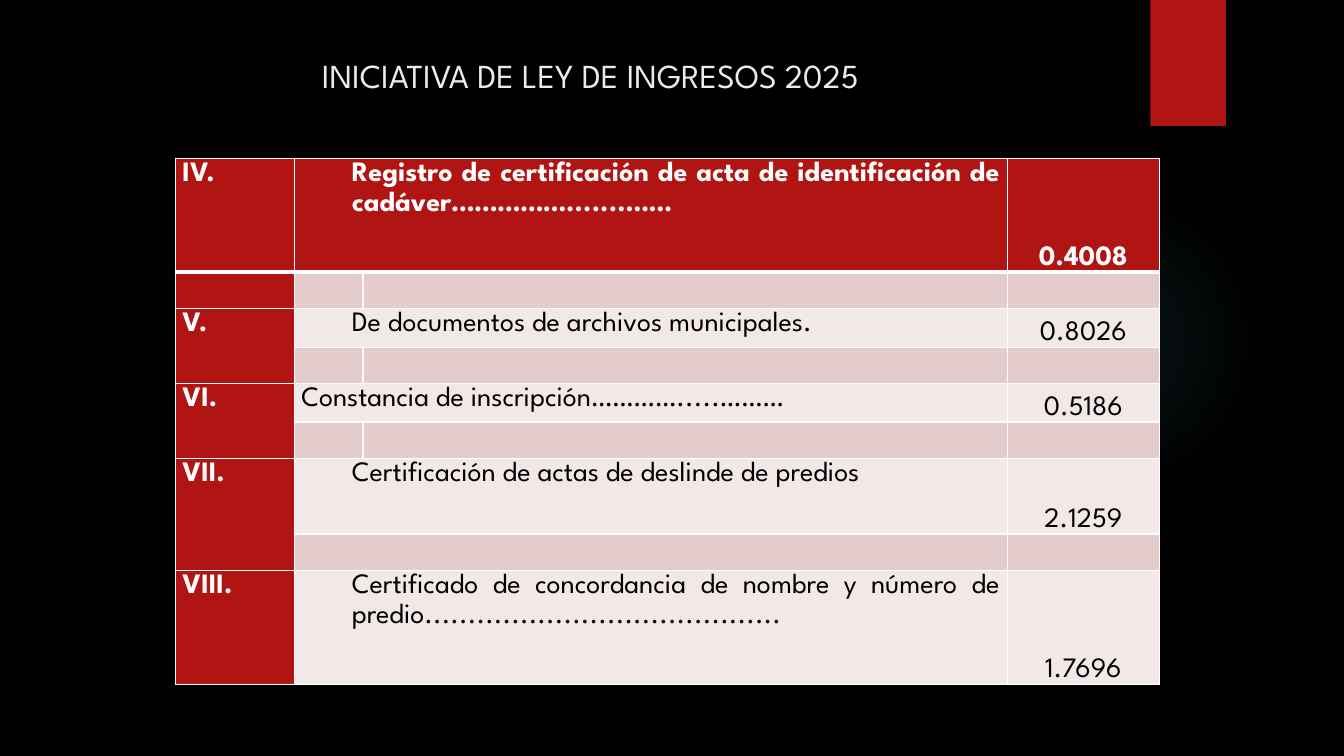
from lxml.etree import SubElement
from pptx import Presentation
from pptx.dml.color import RGBColor
from pptx.enum.shapes import MSO_SHAPE
from pptx.enum.text import MSO_ANCHOR, PP_ALIGN
from pptx.oxml import parse_xml
from pptx.oxml.ns import qn
from pptx.util import Inches, Pt

FONT = "League Spartan"
RED, PINK, PALE, WHITE, BLACK = "B01513", "E4CCCC", "F2E8E7", "FFFFFF", "000000"
NS = 'xmlns:a="http://schemas.openxmlformats.org/drawingml/2006/main"'
COLS = [1.18, 0.68, 6.39, 1.51]
ROWS = [1.13, 0.36, 0.36, 0.36, 0.36, 0.36, 0.75, 0.36, 1.13]

# Table row: label, concept, fee, indent
ITEMS = {
    0: ("IV.", "Registro de certificación de acta de identificación de "
        "cadáver…………….......……", "0.4008", 0.5),
    2: ("V.", "De documentos de archivos municipales.", "0.8026", 0.5),
    4: ("VI.", "Constancia de inscripción………….....………", "0.5186", 0),
    6: ("VII.", "Certificación de actas de deslinde de predios", "2.1259", 0.5),
    8: ("VIII.", "Certificado de concordancia de nombre y número de "
        "predio.........................................", "1.7696", 0.5),
}


def color(code):
    return RGBColor.from_string(code)


def paint(part, code):
    part.fill.solid()
    part.fill.fore_color.rgb = color(code)


def write(para, text, size, code, align, bold=False):
    para.text = text
    para.alignment = align
    font = para.font
    font.name, font.size, font.bold = FONT, Pt(size), bold
    font.color.rgb = color(code)


def shape(slide, kind, box):
    form = slide.shapes.add_shape(kind, *map(Inches, box))
    form.shadow.inherit = False
    form.line.fill.background()
    return form


def decor(slide, glow, tab):
    # Faint glow that fades outwards
    disc = shape(slide, MSO_SHAPE.OVAL, glow)
    stops = "".join(
        f'<a:gs pos="{pos}000"><a:srgbClr val="50B9C1">'
        f'<a:alpha val="{alpha}000"/></a:srgbClr></a:gs>'
        for pos, alpha in ((0, 7), (36, 6), (69, 0)))
    fill = parse_xml(
        f'<a:gradFill {NS}><a:gsLst>{stops}</a:gsLst><a:path path="circle">'
        '<a:fillToRect l="50000" t="50000" r="50000" b="50000"/>'
        '</a:path></a:gradFill>')
    disc._element.spPr.find(qn("a:prstGeom")).addnext(fill)
    # Red tab
    paint(shape(slide, MSO_SHAPE.RECTANGLE, tab), RED)


def title(slide, box):
    frame = slide.shapes.add_textbox(*map(Inches, box)).text_frame
    frame.word_wrap = True
    frame.vertical_anchor = MSO_ANCHOR.MIDDLE
    write(frame.paragraphs[0], "INICIATIVA DE LEY DE INGRESOS 2025", 24,
          "EBEBEB", PP_ALIGN.CENTER)


def edge(cell, row):
    props = cell._tc.get_or_add_tcPr()
    heavy = {(0, "B"), (1, "T")}
    for spot, side in enumerate("LRTB"):
        line = SubElement(props, qn(f"a:ln{side}"))
        line.set("w", str(Pt(3 if (row, side) in heavy else 1)))
        fill = SubElement(line, qn("a:solidFill"))
        SubElement(fill, qn("a:srgbClr")).set("val", WHITE)
        props.insert(spot, line)


def fill_cell(cell, text, code, align, bold, indent=0):
    para = cell.text_frame.paragraphs[0]
    para.line_spacing = 1.15
    if indent:
        props = para._p.get_or_add_pPr()
        props.set("marL", str(Inches(indent)))
        props.set("indent", "0")
    write(para, text, 20, code, align, bold)


def fees(slide, box):
    table = slide.shapes.add_table(
        len(ROWS), len(COLS), *map(Inches, box)).table
    table.first_row = table.horz_banding = False
    for col, width in zip(table.columns, COLS):
        col.width = Inches(box[2] * width / sum(COLS))
    for row, height in zip(table.rows, ROWS):
        row.height = Inches(box[3] * height / sum(ROWS))

    # Bands, margins and borders
    for r in range(len(ROWS)):
        for c in range(len(COLS)):
            cell = table.cell(r, c)
            cell.margin_left = cell.margin_right = Inches(0.07)
            cell.margin_top = cell.margin_bottom = 0
            paint(cell, RED if r == 0 or c == 0 else PINK if r % 2 else PALE)
            edge(cell, r)

    # Merged cells
    for r in (*ITEMS, 7):
        table.cell(r, 1).merge(table.cell(r, 2))
    for r in (2, 4, 6):
        table.cell(r, 0).merge(table.cell(r + 1, 0))

    # Wording
    for r, (label, concept, fee, indent) in ITEMS.items():
        head = r == 0
        ink = WHITE if head else BLACK
        fill_cell(table.cell(r, 0), label, WHITE, PP_ALIGN.JUSTIFY, True)
        fill_cell(table.cell(r, 1), concept, ink, PP_ALIGN.JUSTIFY, head, indent)
        fill_cell(table.cell(r, 3), fee, ink, PP_ALIGN.CENTER, head)
        table.cell(r, 3).vertical_anchor = MSO_ANCHOR.BOTTOM


def main():
    deck = Presentation()
    deck.slide_width, deck.slide_height = Inches(13.33), Inches(7.5)
    slide = deck.slides.add_slide(deck.slide_layouts[6])
    paint(slide.background, BLACK)
    decor(slide, (9.41, 1.83, 3.08, 3.08), (11.41, 0, 0.75, 1.25))
    title(slide, (0.71, 0.5, 10.29, 0.49))
    fees(slide, (1.74, 1.57, sum(COLS), sum(ROWS)))
    deck.save("out.pptx")


if __name__ == "__main__":
    main()
